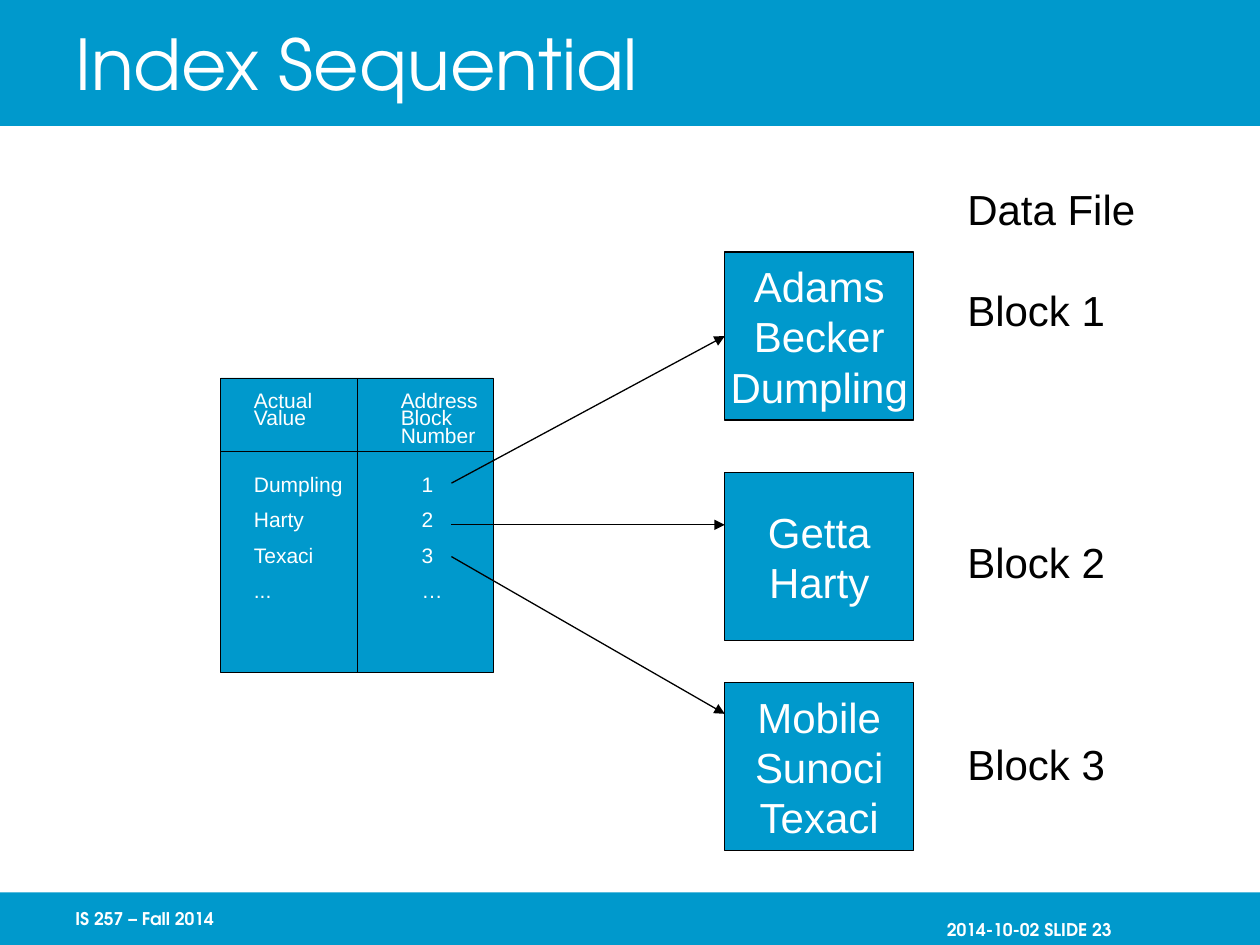
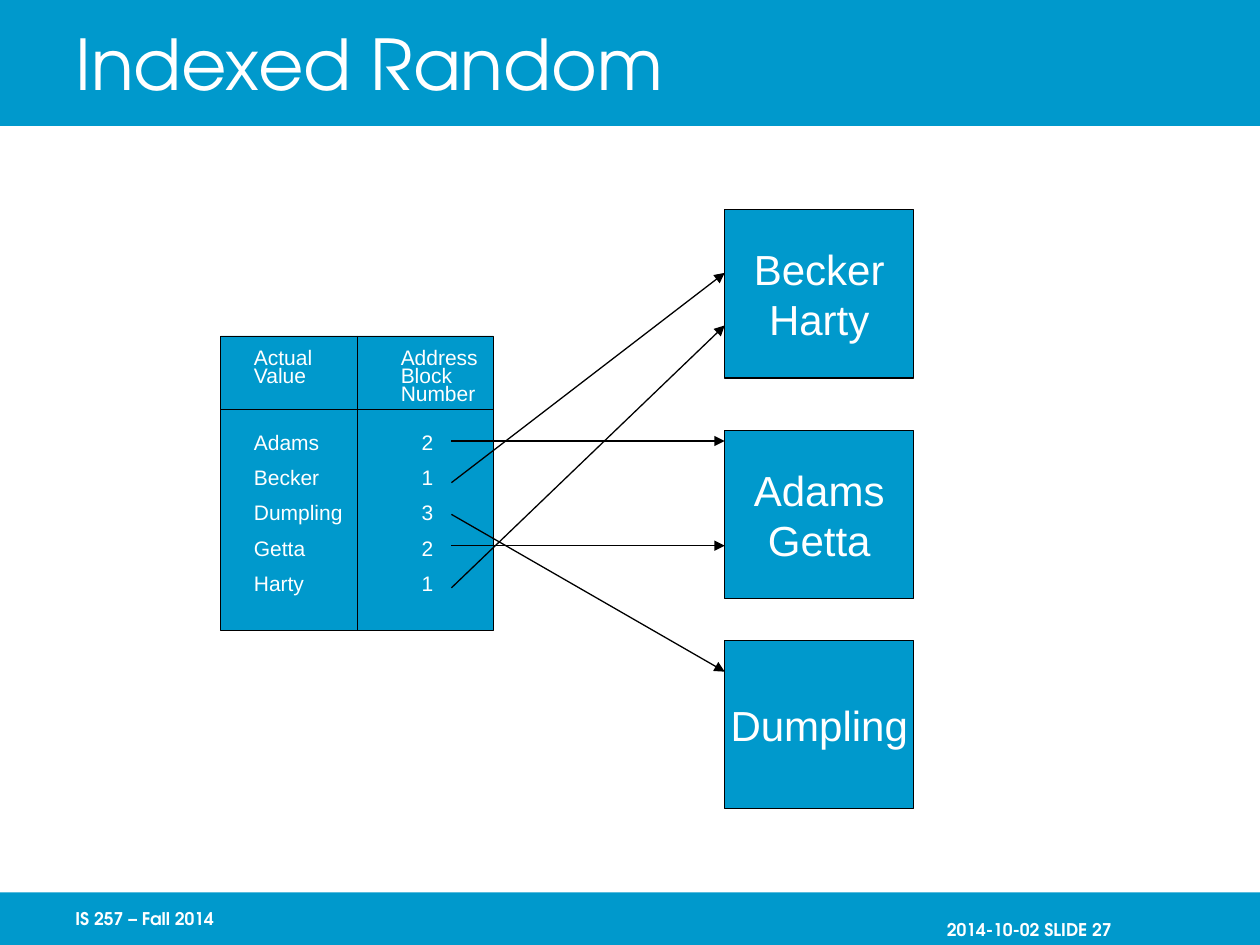
from lxml.etree import SubElement
from pptx import Presentation
from pptx.dml.color import RGBColor
from pptx.enum.shapes import MSO_CONNECTOR, MSO_SHAPE
from pptx.enum.text import MSO_ANCHOR, MSO_AUTO_SIZE, PP_ALIGN
from pptx.oxml.ns import qn
from pptx.util import Cm, Pt

BLUE, BLACK, WHITE = "0099CC", "000000", "FFFFFF"
HEAD_FONT, BODY_FONT = "TeX Gyre Adventor", "Arial"
SLIDE_W, SLIDE_H = 25.4, 19.05
BAND_H, FOOT_TOP, FOOT_H = 2.54, 17.99, 1.06

# Index table, in cm
INDEX_X, INDEX_W, INDEX_H = 4.45, 5.5, 5.93
HEADER_H = 1.48
ARROW_X = 9.1

# Data blocks, with tops measured from the top of the index
BLOCK_X, BLOCK_W, BLOCK_H = 14.61, 3.81, 3.39
BLOCK_TOPS = (-2.54, 1.91, 6.14)


def rgb(color):
    return RGBColor.from_string(color)


def write(tf, lines, size, color, font=BODY_FONT, bold=False,
          align=PP_ALIGN.LEFT, spacing=None, gaps=None):
    """Fill a text frame; gaps holds the space before each line in points."""
    for i, line in enumerate(lines):
        p = tf.paragraphs[0] if i == 0 else tf.add_paragraph()
        p.text = line
        p.alignment = align
        if spacing:
            p.line_spacing = spacing
        if gaps and i:
            p.space_before = Pt(gaps[i])
        p.font.name, p.font.size, p.font.bold = font, Pt(size), bold
        p.font.color.rgb = rgb(color)


def add_text(s, x, y, w, h, lines, size, color, anchor=MSO_ANCHOR.TOP, **style):
    tf = s.shapes.add_textbox(Cm(x), Cm(y), Cm(w), Cm(h)).text_frame
    tf.word_wrap = True
    tf.vertical_anchor = anchor
    write(tf, lines, size, color, **style)


def add_box(s, x, y, w, h, line_width=None):
    sp = s.shapes.add_shape(MSO_SHAPE.RECTANGLE, Cm(x), Cm(y), Cm(w), Cm(h))
    sp.shadow.inherit = False
    sp.fill.solid()
    sp.fill.fore_color.rgb = rgb(BLUE)
    if line_width:
        sp.line.color.rgb = rgb(BLACK)
        sp.line.width = Pt(line_width)
    else:
        sp.line.fill.background()
    return sp


def add_line(s, x1, y1, x2, y2, arrow=False):
    line = s.shapes.add_connector(MSO_CONNECTOR.STRAIGHT,
                                  Cm(x1), Cm(y1), Cm(x2), Cm(y2))
    line.line.color.rgb = rgb(BLACK)
    line.line.width = Pt(0.75)
    if arrow:
        SubElement(line.line._get_or_add_ln(), qn("a:tailEnd"), type="triangle")
    SubElement(line._element.spPr, qn("a:effectLst"))
    return line


def add_bands(s):
    """Draw both bands and move them to the layout, behind all else."""
    tree = s.slide_layout.shapes.element
    for y, h in ((0, BAND_H), (FOOT_TOP, FOOT_H)):
        tree.insert(2, add_box(s, 0, y, SLIDE_W, h).element)


def add_title(s, text):
    title = s.shapes.title
    title.left, title.top = Cm(1.27), Cm(0)
    title.width, title.height = Cm(21.59), Cm(BAND_H)
    tf = title.text_frame
    tf.auto_size = MSO_AUTO_SIZE.NONE
    tf.vertical_anchor = MSO_ANCHOR.MIDDLE
    write(tf, [text], 40, WHITE, font=HEAD_FONT)


def add_footer(s, number):
    style = dict(font=HEAD_FONT, bold=True, anchor=MSO_ANCHOR.MIDDLE)
    add_text(s, 1.27, FOOT_TOP, 5.28, FOOT_H, ["IS 257 – Fall 2014"],
             10, WHITE, **style)
    add_text(s, 17.4, FOOT_TOP + 0.21, 5.26, FOOT_H,
             [f"2014-10-02 SLIDE {number}"], 10, WHITE,
             align=PP_ALIGN.RIGHT, **style)


def add_index(s, top, rows):
    add_box(s, INDEX_X, top, INDEX_W, INDEX_H, 0.25)
    middle = INDEX_X + INDEX_W / 2
    add_line(s, middle, top, middle, top + INDEX_H)
    add_line(s, INDEX_X, top + HEADER_H, INDEX_X + INDEX_W, top + HEADER_H)
    values, numbers = zip(*rows)
    gaps = [10.1] * len(rows)
    for x, y, w, h, lines, gap in (
            (4.87, 0.2, 2.5, 0.97, ["Actual", "Value"], None),
            (7.83, 0.2, 2.3, 1.32, ["Address", "Block", "Number"], None),
            (4.87, 1.9, 2.6, 3.48, values, gaps),
            (8.25, 1.9, 1.3, 3.48, numbers, gaps)):
        add_text(s, x, top + y, w, h, lines, 12, WHITE, spacing=0.7, gaps=gap)


def add_blocks(s, top, contents):
    blocks = []
    for offset, names in zip(BLOCK_TOPS, contents):
        block = add_box(s, BLOCK_X, top + offset, BLOCK_W, BLOCK_H, 0.75)
        tf = block.text_frame
        tf.word_wrap = False
        tf.vertical_anchor = MSO_ANCHOR.MIDDLE
        write(tf, names, 24, WHITE, align=PP_ALIGN.CENTER)
        blocks.append(block)
    return blocks


def add_pointers(s, top, blocks, pointers):
    """Draw arrows from index rows to blocks, joined where they meet a middle."""
    for start, end in pointers:
        line = add_line(s, ARROW_X, top + start, BLOCK_X, top + end, arrow=True)
        for block, offset in zip(blocks, BLOCK_TOPS):
            if abs(offset + BLOCK_H / 2 - end) < 0.02:
                line.end_connect(block, 1)


def add_diagram(s, title, number, top, rows, contents, pointers):
    add_title(s, title)
    add_footer(s, number)
    add_index(s, top, rows)
    blocks = add_blocks(s, top, contents)
    add_pointers(s, top, blocks, pointers)


def main():
    prs = Presentation()
    prs.slide_width, prs.slide_height = Cm(SLIDE_W), Cm(SLIDE_H)
    layout = prs.slide_layouts[5]

    # Index sequential
    s = prs.slides.add_slide(layout)
    add_bands(s)
    add_diagram(
        s, "Index Sequential", 23, 7.62,
        [("Dumpling", "1"), ("Harty", "2"), ("Texaci", "3"), ("...", "…")],
        [["Adams", "Becker", "Dumpling"], ["Getta", "Harty"],
         ["Mobile", "Sunoci", "Texaci"]],
        [(2.12, -0.85), (2.96, 2.96), (3.6, 6.77)])
    add_text(s, 19.25, 3.58, 4.4, 12.42,
             ["Data File", "Block 1", "Block 2", "Block 3"], 24, BLACK,
             gaps=[0, 28.8, 115.2, 86.4])

    # Indexed random
    s = prs.slides.add_slide(layout)
    add_diagram(
        s, "Indexed Random", 27, 6.77,
        [("Adams", "2"), ("Becker", "1"), ("Dumpling", "3"),
         ("Getta", "2"), ("Harty", "1")],
        [["Becker", "Harty"], ["Adams", "Getta"], ["Dumpling"]],
        [(2.12, 2.12), (2.96, -1.27), (3.6, 6.77), (4.23, 4.23), (5.08, -0.21)])

    prs.save("out.pptx")


if __name__ == "__main__":
    main()
